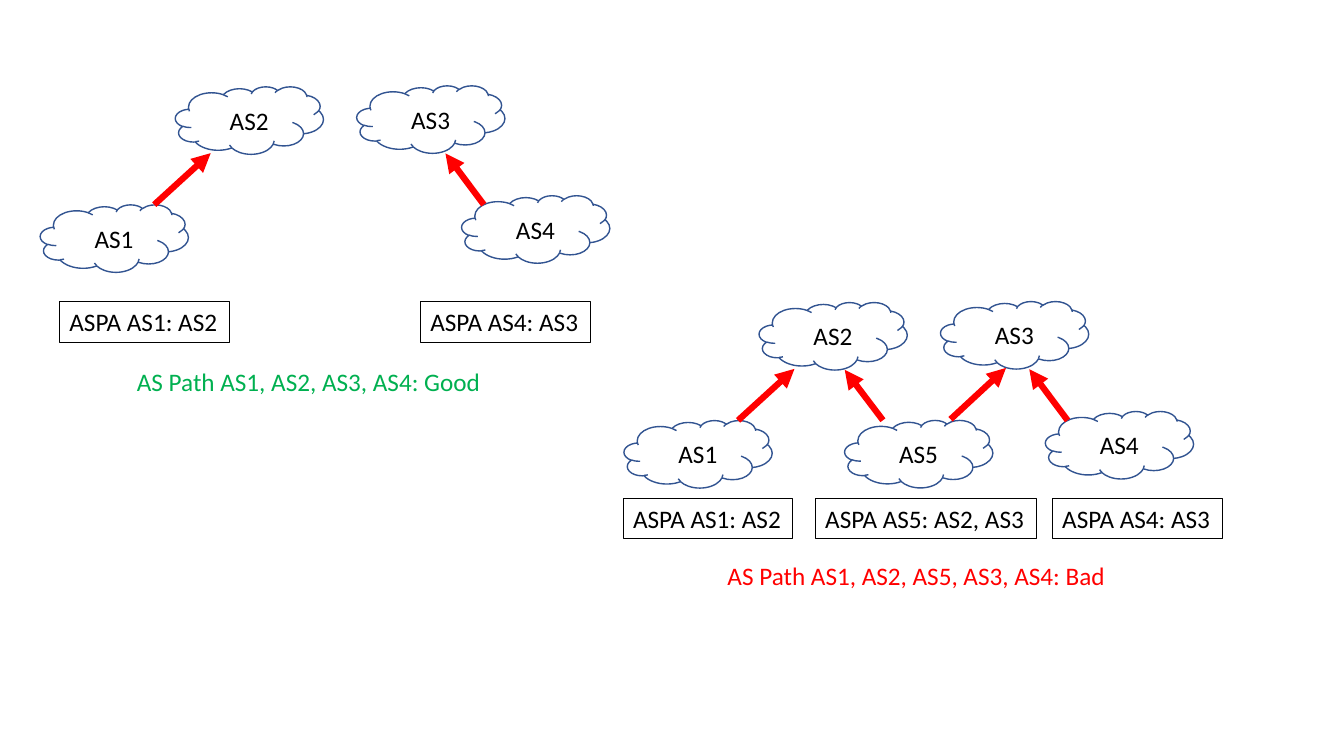
import pptx
import pptx.dml.color
import pptx.enum.shapes
import pptx.enum.text
import pptx.oxml
import pptx.oxml.ns
import pptx.util

Pt = pptx.util.Pt
RGB = pptx.dml.color.RGBColor.from_string

THEME = {
    "text": "000000", "cloud": "325491", "arrow": "FF0000",
    "good": "00B050", "bad": "FF0000",
    "font": {"name": "Calibri", "size": Pt(18)},
    "cloud_line": 1, "arrow_line": 4.5, "box_line": 0.5,
}
FRAME = {"word_wrap": False, "auto_size": pptx.enum.text.MSO_AUTO_SIZE.SHAPE_TO_FIT_TEXT}
CLOUD_W, CLOUD_H, TEXT_H = 105.8, 48.2, 29.1


def add_text(shapes, text, x, y, w, color=THEME["text"]):
    sp = shapes.add_textbox(Pt(x), Pt(y), Pt(w), Pt(TEXT_H))
    tf = sp.text_frame
    for key, value in FRAME.items():
        setattr(tf, key, value)
    r = tf.paragraphs[0].add_run()
    r.text = text
    for key, value in THEME["font"].items():
        setattr(r.font, key, value)
    r.font.color.rgb = RGB(color)
    return sp


def set_line(sp, color, width):
    sp.line.color.rgb = RGB(color)
    sp.line.width = Pt(width)


prs = pptx.Presentation()
prs.slide_width, prs.slide_height = Pt(960), Pt(540)
s = prs.slides.add_slide(prs.slide_layouts[6])

# Shared topology, placed once per panel
clouds = [("AS1", 28.8, 146.2), ("AS3", 254.9, 61.2),
          ("AS2", 125.3, 61.9), ("AS4", 329.8, 139.7)]
arrows = [(110.2, 146.2, 150.5, 109.4), (345.6, 146.2, 318.2, 109.6)]

# Panels: offset, clouds, arrows
panels = [
    (0, 0, clouds, arrows),
    (417, 154.1, clouds + [("AS5", 186.4, 146.1)],
     arrows + [(213.7, 146.1, 186.4, 110.1), (262, 145.4, 301.6, 108.7)]),
]
for dx, dy, panel_clouds, panel_arrows in panels:
    for name, x, y in panel_clouds:
        group = s.shapes.add_group_shape()
        sp = group.shapes.add_shape(pptx.enum.shapes.MSO_SHAPE.CLOUD,
                                    Pt(x + dx), Pt(y + dy), Pt(CLOUD_W), Pt(CLOUD_H))
        sp.shadow.inherit = False
        sp.fill.background()
        set_line(sp, THEME["cloud"], THEME["cloud_line"])
        add_text(group.shapes, name, x + dx + 31.7, y + dy + 9.5, 42.4)

    for x1, y1, x2, y2 in panel_arrows:
        arrow = s.shapes.add_connector(pptx.enum.shapes.MSO_CONNECTOR.STRAIGHT,
                                       Pt(x1 + dx), Pt(y1 + dy), Pt(x2 + dx), Pt(y2 + dy))
        set_line(arrow, THEME["arrow"], THEME["arrow_line"])
        tail = pptx.oxml.parse_xml(
            f'<a:tailEnd {pptx.oxml.ns.nsdecls("a")} type="triangle"/>')
        arrow.line._get_or_add_ln().append(tail)
        arrow._element.spPr.append(
            pptx.oxml.parse_xml(f'<a:effectLst {pptx.oxml.ns.nsdecls("a")}/>'))

# ASPA records
records = [
    ("ASPA AS1: AS2", 42.5, 215.3, 121.2),
    ("ASPA AS4: AS3", 300.3, 215.3, 121.2),
    ("ASPA AS1: AS2", 445.1, 355.7, 121.2),
    ("ASPA AS4: AS3", 751.7, 355.7, 121.2),
    ("ASPA AS5: AS2, AS3", 582.4, 355.7, 157.9),
]
for text, x, y, w in records:
    sp = add_text(s.shapes, text, x, y, w)
    set_line(sp, THEME["text"], THEME["box_line"])

# Path verdicts
add_text(s.shapes, "AS Path AS1, AS2, AS3, AS4: Good", 90.7, 257.8, 262, THEME["good"])
add_text(s.shapes, "AS Path AS1, AS2, AS5, AS3, AS4: Bad", 512.6, 396.9, 287.2, THEME["bad"])

prs.save("out.pptx")
